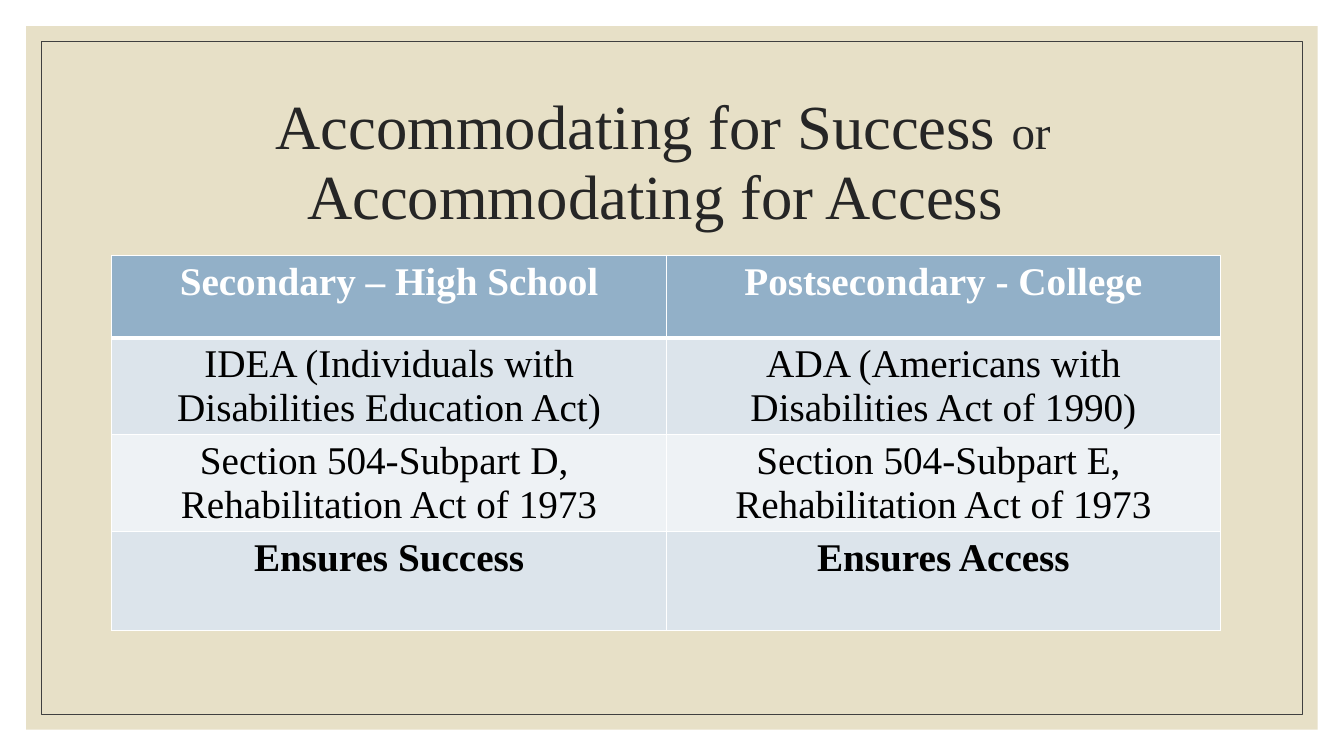
from lxml import etree
from pptx import Presentation
from pptx.dml.color import RGBColor
from pptx.enum.shapes import MSO_SHAPE
from pptx.enum.text import MSO_ANCHOR, MSO_AUTO_SIZE, PP_ALIGN
from pptx.oxml.ns import qn
from pptx.util import Cm, Pt

RECTANGLE = MSO_SHAPE.RECTANGLE
CENTER = PP_ALIGN.CENTER
TOP, MIDDLE = MSO_ANCHOR.TOP, MSO_ANCHOR.MIDDLE
NO_AUTOFIT = MSO_AUTO_SIZE.NONE

FONT = "Times New Roman"
COLORS = {
    "sand": "E7E0C7",
    "frame": "404040",
    "title": "262626",
    "header": "92B0C8",
    "band": "DCE4EB",
    "light": "EEF2F5",
    "white": "FFFFFF",
    "black": "000000",
}

TITLE = [
    ("Accommodating for Success ", 44.8),
    ("or", 33.6),
    (" Accommodating for Access ", 44.8),
]
ROWS = [
    {"height": 2.08, "fill": "header", "color": "white", "bold": True, "anchor": TOP,
     "cells": [["Secondary – High School"], ["Postsecondary - College"]]},
    {"height": 1.93, "fill": "band", "color": "black", "bold": False, "anchor": MIDDLE,
     "cells": [["IDEA (Individuals with Disabilities Education Act)"],
               ["ADA (Americans with Disabilities Act of 1990)"]]},
    {"height": 2.11, "fill": "light", "color": "black", "bold": False, "anchor": MIDDLE,
     "cells": [["Section 504-Subpart D, ", "Rehabilitation Act of 1973"],
               ["Section 504-Subpart E, ", "Rehabilitation Act of 1973"]]},
    {"height": 2.49, "fill": "band", "color": "black", "bold": True, "anchor": TOP,
     "cells": [["Ensures Success"], ["Ensures Access"]]},
]

PAGE_WIDTH, PAGE_HEIGHT = 33.87, 19.05
PANEL_MARGIN, FRAME_MARGIN = 0.66, 1.04
TITLE_BOX = (2.74, 2.21, 27.94, 3.81)
TABLE_LEFT, TABLE_TOP, COLUMN_WIDTH = 2.82, 6.43, 13.97


def color(name):
    return RGBColor.from_string(COLORS[name])


def add_panel(page, margin):
    panel = page.shapes.add_shape(
        RECTANGLE, Cm(margin), Cm(margin),
        Cm(PAGE_WIDTH - 2 * margin), Cm(PAGE_HEIGHT - 2 * margin))
    panel.shadow.inherit = False
    return panel


def add_span(para, text, size, tint, bold=False):
    para.alignment = CENTER
    span = para.add_run()
    span.text = text
    span.font.name = FONT
    span.font.size = Pt(size)
    span.font.bold = bold
    span.font.color.rgb = color(tint)


def add_border(cell, side, width):
    line = etree.SubElement(cell._tc.get_or_add_tcPr(), qn(f"a:ln{side}"), w=str(Pt(width)))
    fill = etree.SubElement(line, qn("a:solidFill"))
    etree.SubElement(fill, qn("a:srgbClr"), val=COLORS["white"])


def add_title(page):
    title = page.shapes.title
    page.shapes._spTree.append(title._element)
    title.left, title.top, title.width, title.height = map(Cm, TITLE_BOX)
    frame = title.text_frame
    frame.word_wrap = True
    frame.auto_size = NO_AUTOFIT
    frame.vertical_anchor = MIDDLE
    para = frame.paragraphs[0]
    para.line_spacing = 0.93
    for text, size in TITLE:
        add_span(para, text, size, "title")


def add_comparison(page):
    columns = len(ROWS[0]["cells"])
    height = sum(row["height"] for row in ROWS)
    table = page.shapes.add_table(
        len(ROWS), columns, Cm(TABLE_LEFT), Cm(TABLE_TOP),
        Cm(COLUMN_WIDTH * columns), Cm(height)).table
    for column in table.columns:
        column.width = Cm(COLUMN_WIDTH)
    for index, row in enumerate(ROWS):
        table.rows[index].height = Cm(row["height"])
        widths = {"L": 1, "R": 1, "T": 3 if index == 1 else 1, "B": 3 if index == 0 else 1}
        for cell, lines in zip(table.rows[index].cells, row["cells"]):
            for side, width in widths.items():
                add_border(cell, side, width)
            cell.fill.solid()
            cell.fill.fore_color.rgb = color(row["fill"])
            cell.vertical_anchor = row["anchor"]
            frame = cell.text_frame
            for number, text in enumerate(lines):
                para = frame.add_paragraph() if number else frame.paragraphs[0]
                add_span(para, text, 28, row["color"], row["bold"])


def main():
    deck = Presentation()
    deck.slide_width, deck.slide_height = Cm(PAGE_WIDTH), Cm(PAGE_HEIGHT)
    page = deck.slides.add_slide(deck.slide_layouts.get_by_name("Title Only"))

    panel = add_panel(page, PANEL_MARGIN)
    panel.fill.solid()
    panel.fill.fore_color.rgb = color("sand")
    panel.line.fill.background()

    frame = add_panel(page, FRAME_MARGIN)
    frame.fill.background()
    frame.line.color.rgb = color("frame")
    frame.line.width = Pt(0.5)

    add_title(page)
    add_comparison(page)
    deck.save("out.pptx")


if __name__ == "__main__":
    main()
